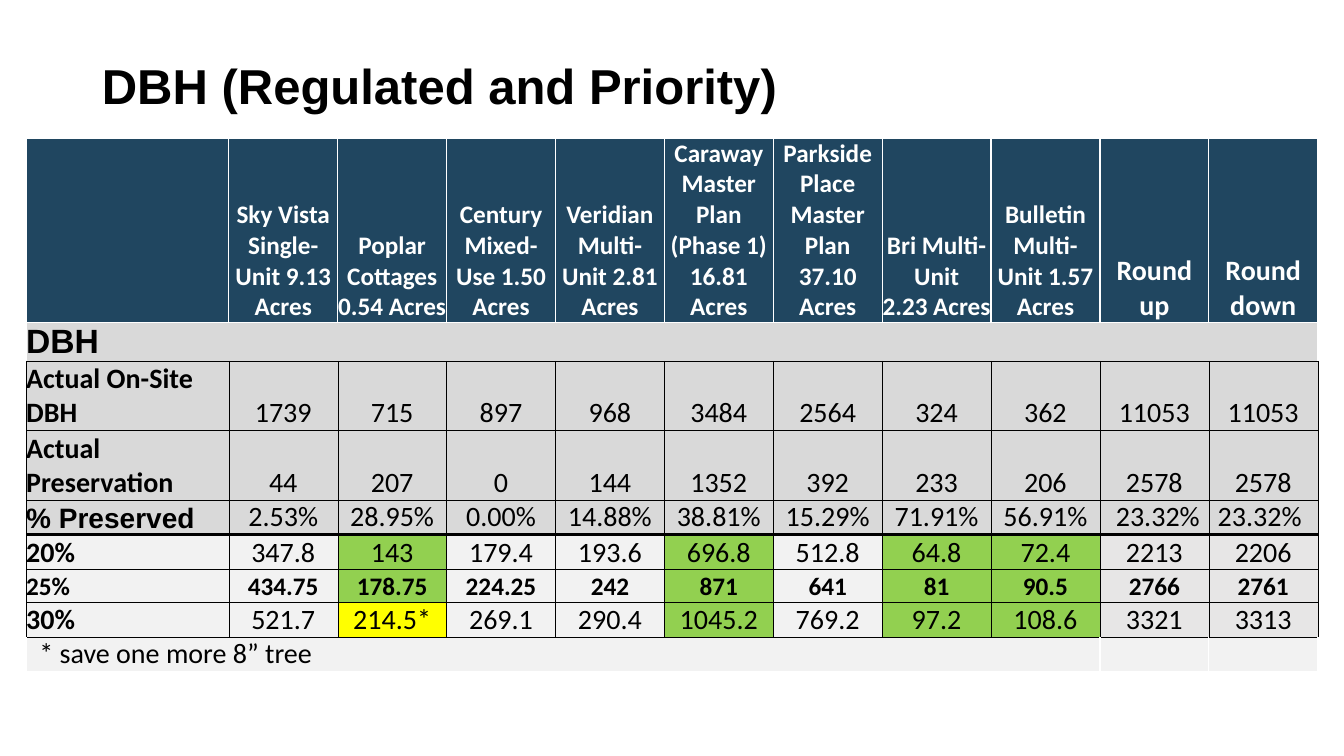
from dataclasses import dataclass
from typing import Optional

from lxml.etree import SubElement
from pptx import Presentation
from pptx.dml.color import RGBColor
from pptx.enum.text import MSO_ANCHOR, PP_ALIGN
from pptx.oxml.ns import qn
from pptx.util import Inches, Pt

NAVY, WHITE, BLACK = "204660", "FFFFFF", "000000"
GREY, PALE, TOTAL = "D9D9D9", "F2F2F2", "E7E6E6"
GREEN, YELLOW = "92D050", "FFFF00"

HAIRLINE = (BLACK, 0.25)
THICK = (BLACK, 2.25)
WHITE_LINE = (WHITE, 1)
FIRST_TOTAL, LAST_TOTAL = 9, 10
SAVED_COLUMNS = {2, 5, 7, 8}


@dataclass
class TableRow:
    height: float
    texts: list[str]
    fill: str
    size: float = 20
    label_size: float = 20
    label_font: str = "Calibri"
    label_bold: bool = True
    bold: bool = False
    color: str = BLACK
    top: tuple[str, float] = HAIRLINE
    bottom: tuple[str, float] = HAIRLINE
    side: tuple[str, float] = HAIRLINE
    merged: int = 1
    is_target: bool = False


HEADINGS = [
    "", "Sky Vista Single-Unit 9.13 Acres", "Poplar\nCottages 0.54 Acres",
    "Century Mixed-Use 1.50 Acres", "Veridian Multi-Unit 2.81 Acres",
    "Caraway Master Plan\n(Phase 1) 16.81 Acres",
    "Parkside Place Master Plan\n37.10 Acres", "Bri Multi-Unit\n2.23 Acres",
    "Bulletin Multi-Unit 1.57 Acres", "Round\nup", "Round\ndown",
]

ROWS = [
    TableRow(1.83, HEADINGS, NAVY, size=18, bold=True, color=WHITE,
             top=WHITE_LINE, bottom=WHITE_LINE, side=WHITE_LINE),
    TableRow(0.38, ["DBH"], GREY, label_size=24, label_font="Arial",
             top=WHITE_LINE, side=WHITE_LINE, merged=11),
    TableRow(0.69, ["Actual On-Site DBH", "1739", "715", "897", "968", "3484",
                    "2564", "324", "362", "11053", "11053"], GREY),
    TableRow(0.69, ["Actual Preservation", "44", "207", "0", "144", "1352",
                    "392", "233", "206", "2578", "2578"], GREY),
    TableRow(0.34, ["% Preserved", "2.53%", "28.95%", "0.00%", "14.88%", "38.81%",
                    "15.29%", "71.91%", "56.91%", "23.32%", "23.32%"], GREY,
             label_font="Arial", bottom=THICK),
    TableRow(0.35, ["20%", "347.8", "143", "179.4", "193.6", "696.8", "512.8",
                    "64.8", "72.4", "2213", "2206"], PALE, top=THICK, is_target=True),
    TableRow(0.32, ["25%", "434.75", "178.75", "224.25", "242", "871", "641",
                    "81", "90.5", "2766", "2761"], PALE, size=18, label_size=18,
             bold=True, is_target=True),
    TableRow(0.35, ["30%", "521.7", "214.5*", "269.1", "290.4", "1045.2", "769.2",
                    "97.2", "108.6", "3321", "3313"], PALE, is_target=True),
    TableRow(0.33, ["* save one more 8” tree"], PALE, label_bold=False,
             bottom=WHITE_LINE, side=WHITE_LINE, merged=9),
]


def rgb(value: str) -> RGBColor:
    return RGBColor.from_string(value)


def set_font(font, **values) -> None:
    font.color.rgb = rgb(values.pop("color"))
    for name, value in values.items():
        setattr(font, name, value)


def set_borders(cell, row: TableRow) -> None:
    """Put the four edges ahead of the fill, as the schema orders them."""
    properties = cell._tc.get_or_add_tcPr()
    edges = {"lnL": row.side, "lnR": row.side, "lnT": row.top, "lnB": row.bottom}
    for place, (tag, (color, width)) in enumerate(edges.items()):
        line = SubElement(properties, qn(f"a:{tag}"), w=str(int(Pt(width))))
        solid = SubElement(line, qn("a:solidFill"))
        SubElement(solid, qn("a:srgbClr"), val=color)
        properties.insert(place, line)


def cell_fill(row: TableRow, column: int) -> str:
    if row.is_target:
        if column >= FIRST_TOTAL:
            return TOTAL
        if row.texts[column].endswith("*"):
            return YELLOW
        if column in SAVED_COLUMNS:
            return GREEN
    return row.fill


def write_cell(cell, row: TableRow, column: int) -> None:
    margins = {"margin_left": 0, "margin_right": 0, "margin_top": 0, "margin_bottom": 0}
    text: Optional[str] = row.texts[column] if column < len(row.texts) else None
    if text and text.startswith("*"):
        margins["margin_left"] = 0.13
    if text == "23.32%":
        margins["margin_left" if column == FIRST_TOTAL else "margin_right"] = 0.07
    for name, value in margins.items():
        setattr(cell, name, Inches(value))
    cell.vertical_anchor = MSO_ANCHOR.BOTTOM
    cell.fill.solid()
    cell.fill.fore_color.rgb = rgb(cell_fill(row, column))
    set_borders(cell, row)

    is_label = column == 0
    size = row.label_size if is_label else row.size
    if row.fill == NAVY and column >= FIRST_TOTAL:
        size = 20
    cell.text = text or ""
    for para in cell.text_frame.paragraphs:
        para.alignment = PP_ALIGN.LEFT if is_label else PP_ALIGN.CENTER
        set_font(para.font, size=Pt(size), color=row.color,
                 name=row.label_font if is_label else "Calibri",
                 bold=row.label_bold if is_label else row.bold)
        for span in para.runs:
            set_font(span.font, size=Pt(size), color=row.color,
                     name=para.font.name, bold=para.font.bold)


def add_title(page) -> None:
    title = page.shapes.title
    frame = {"left": 0.91, "top": 0.54, "width": 11.5, "height": 0.65}
    for name, value in frame.items():
        setattr(title, name, Inches(value))
    box = title.text_frame
    box.text = "DBH (Regulated and Priority)"
    box.word_wrap = True
    box.vertical_anchor = MSO_ANCHOR.BOTTOM
    para = box.paragraphs[0]
    para.alignment = PP_ALIGN.LEFT
    para.line_spacing = 0.9
    set_font(para.runs[0].font, name="Arial", size=Pt(35), bold=True, color=BLACK)


def add_tree_table(page) -> None:
    columns = len(HEADINGS)
    height = sum(row.height for row in ROWS)
    table = page.shapes.add_table(len(ROWS), columns, Inches(0.26), Inches(1.37),
                                  Inches(12.81), Inches(height)).table
    for index, column in enumerate(table.columns):
        column.width = Inches(1.08 if index else 2.01)
    for index, row in enumerate(ROWS):
        table.rows[index].height = Inches(row.height)
        for column in range(columns):
            write_cell(table.cell(index, column), row, column)
        if row.merged > 1:
            table.cell(index, 0).merge(table.cell(index, row.merged - 1))


def main() -> None:
    deck = Presentation()
    deck.slide_width, deck.slide_height = Inches(13.33), Inches(7.5)
    page = deck.slides.add_slide(deck.slide_layouts[5])
    add_tree_table(page)
    add_title(page)
    deck.save("out.pptx")


if __name__ == "__main__":
    main()
